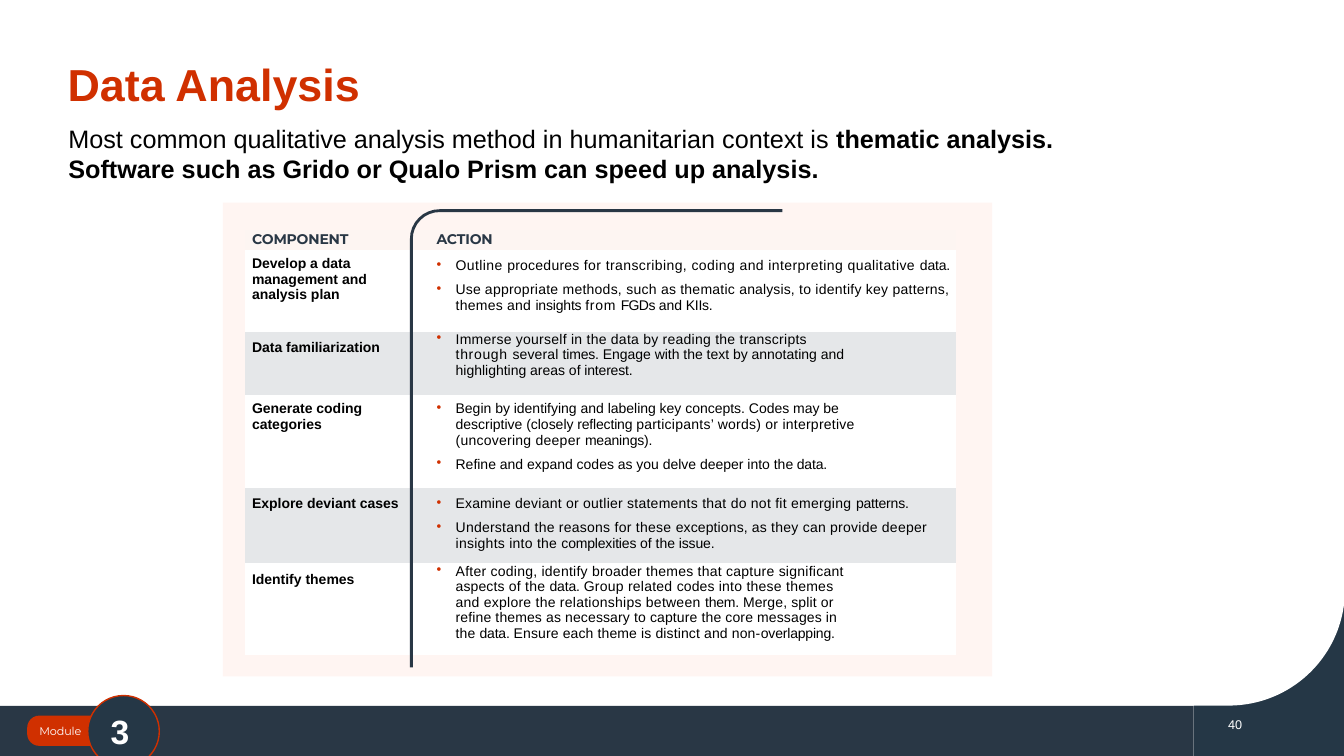
"""Builds the Data Analysis slide with its table of thematic analysis steps."""
import dataclasses
import math

import lxml.etree
import pptx
import pptx.dml.color
import pptx.enum.shapes
import pptx.enum.text
import pptx.oxml.ns
import pptx.util

Inches = pptx.util.Inches
Shape = pptx.enum.shapes.MSO_SHAPE
Align = pptx.enum.text.PP_ALIGN
qn = pptx.oxml.ns.qn
Box = tuple[float, float, float, float]
Spans = list[tuple[str, float]]


@dataclasses.dataclass(frozen=True)
class Theme:
    """Colours, fonts and type sizes."""
    navy: str = "253746"
    slate: str = "293745"
    red: str = "D03000"
    white: str = "FFFFFF"
    black: str = "000000"
    blush: str = "FFF5F2"
    header: str = "FDF5F2"
    grey: str = "E5E7E9"
    body: str = "Arial"
    label: str = "Montserrat"
    title_size: int = 32
    module_size: int = 24
    lead_size: int = 18
    table_size: int = 10
    number_size: int = 9
    tag_size: int = 8


THEME = Theme()


@dataclasses.dataclass(frozen=True)
class Block:
    """A filled preset shape."""
    kind: int
    box: Box
    fill: str
    outline: str | None = None
    corner: float | None = None


@dataclasses.dataclass(frozen=True)
class Label:
    """A text box with one style."""
    box: Box
    text: str
    size: int
    color: str
    font: str = THEME.body
    bold: bool = False
    align: int = Align.LEFT
    insets: Box = (0.1, 0.05, 0.1, 0.05)
    wrap: bool = True
    spacing: float = 0


@dataclasses.dataclass(frozen=True)
class Step:
    """A table row: component, bulleted actions as (text, letter spacing) spans."""
    component: str
    actions: list[Spans]
    height: float
    insets: tuple[float, float]
    right: float = 0


BACKDROP = [
    Block(Shape.RECTANGLE, (11.84, 5.7, 1.5, 1.8), THEME.navy),
    Block(Shape.RECTANGLE, (0, 7, 11.84, 0.5), THEME.slate),
    Block(Shape.ROUND_2_DIAG_RECTANGLE, (0, 0.09, 13.34, 6.91), THEME.white),
    Block(Shape.ROUNDED_RECTANGLE, (0.27, 7.1, 1.2, 0.3), THEME.red, corner=0.4),
    Block(Shape.OVAL, (0.87, 6.9, 0.71, 0.71), THEME.navy, THEME.red),
    Block(Shape.RECTANGLE, (2.21, 2.01, 7.63, 4.7), THEME.blush),
]
LABELS = [
    Label((12.06, 7.06, 0.36, 0.25), "40", THEME.number_size, THEME.white, align=Align.RIGHT, wrap=False),
    Label((0.39, 7.18, 1.02, 0.15), "Module", THEME.tag_size, THEME.white, THEME.label,
          insets=(0, 0.01, 0, 0), spacing=-0.1),
    Label((1, 7, 0.46, 0.5), "3", THEME.module_size, THEME.white, bold=True),
    Label((0.54, 0.43, 11.31, 0.77), "Data Analysis", THEME.title_size, THEME.red, bold=True,
          insets=(0.13, 0.13, 0.13, 0.13)),
]
LEAD = [
    [("Most common qualitative analysis method in humanitarian context is ", False), ("thematic analysis.", True)],
    [("Software such as Grido or Qualo Prism can speed up analysis.", True)],
]
HEADINGS = [("COMPONENT", 0.07), ("ACTION", 0.14)]
HEADER_HEIGHT = 0.2
COLUMNS = (1.76, 5.29)
STEPS = [
    Step("Develop a data management and analysis plan", [
        [("Outline ", 0.3), ("procedures ", 0.2),
         ("for transcribing, coding and interpreting qualitative ", 0.3), ("data.", -0.1)],
        [("Use ", 0.1), ("appropriate methods, such ", 0.2), ("as ", 0.1), ("thematic ", 0.2), ("analysis, ", 0.1),
         ("to identify key patterns, themes and ", 0.2), ("insights ", -0.1), ("from ", 0.5), ("FGDs ", -0.4),
         ("and ", 0), ("KIIs.", -0.2)]], 0.81, (0.06, 0.08)),
    Step("Data familiarization", [
        [("Immerse yourself in the data by reading the transcripts ", 0.2), ("through ", 0.5), ("several ", 0.1),
         ("times. ", -0.1), ("Engage with the text by annotating and highlighting areas of ", 0),
         ("interest.", -0.1)]], 0.63, (0.08, 0), 1.1),
    Step("Generate coding categories", [
        [("Begin by identifying and labeling key concepts. Codes may be descriptive (closely ", 0),
         ("reflecting ", -0.1), ("participants’ words) or interpretive (uncovering deeper ", 0.2),
         ("meanings).", -0.1)],
        [("Refine and expand codes as you delve deeper into the ", 0), ("data.", -0.1)]], 0.92, (0.06, 0.06), 0.85),
    Step("Explore deviant cases", [
        [("Examine ", 0.1), ("deviant or outlier statements that do not fit emerging ", 0.2), ("patterns.", -0.1)],
        [("Understand the reasons for these ", 0.2), ("exceptions, as ", 0.1),
         ("they can provide deeper insights into the ", 0.2), ("complexities ", -0.1), ("of the ", 0),
         ("issue.", -0.1)]], 0.75, (0.08, 0.08)),
    Step("Identify themes", [
        [("After coding, identify broader themes that capture significant ", 0.2), ("aspects ", 0.1),
         ("of the ", 0.2), ("data. ", -0.1), ("Group related ", 0.2), ("codes ", 0.1),
         ("into these themes and explore the relationships between ", 0.2), ("them. ", -0.1),
         ("Merge, split or refine themes as necessary to capture the core messages in the ", 0.1), ("data. ", -0.1),
         ("Ensure each theme is distinct and non-", 0.1), ("overlapping.", -0.1)]], 0.91, (0.08, 0), 0.98),
]


def rgb(color: str) -> pptx.dml.color.RGBColor:
    """Turn a hex string into a colour."""
    return pptx.dml.color.RGBColor.from_string(color)


def style(font, size: int, color: str, name: str = THEME.body, bold: bool | None = False) -> None:
    """Set a font's size, colour, name and weight."""
    font.size, font.name, font.bold = pptx.util.Pt(size), name, bold
    font.color.rgb = rgb(color)


def add_span(para, text: str, spacing: float = 0):
    """Add a run with letter spacing in points."""
    span = para.add_run()
    span.text = text
    if spacing:
        span._r.get_or_add_rPr().set("spc", str(round(spacing * 100)))
    return span


def set_margins(holder, insets: Box) -> None:
    """Set left, top, right and bottom insets."""
    (holder.margin_left, holder.margin_top,
     holder.margin_right, holder.margin_bottom) = map(Inches, insets)


def set_indent(para, left: float, hanging: float = 0, right: float = 0) -> None:
    """Set the paragraph's side margins and hanging indent."""
    props = para._p.get_or_add_pPr()
    for key, value in (("marL", left), ("indent", -hanging), ("marR", right)):
        props.set(key, str(Inches(value)))


def add_bullet(para) -> None:
    """Give the paragraph a red bullet."""
    props = para._p.get_or_add_pPr()
    color = lxml.etree.SubElement(props, qn("a:buClr"))
    lxml.etree.SubElement(color, qn("a:srgbClr")).set("val", THEME.red)
    lxml.etree.SubElement(props, qn("a:buChar")).set("char", "•")


def add_block(page, block: Block) -> None:
    """Draw a filled preset shape."""
    shape = page.shapes.add_shape(block.kind, *map(Inches, block.box))
    shape.shadow.inherit = False
    shape.fill.solid()
    shape.fill.fore_color.rgb = rgb(block.fill)
    if block.corner is not None:
        shape.adjustments[0] = block.corner
    if block.outline:
        shape.line.color.rgb, shape.line.width = rgb(block.outline), pptx.util.Pt(1)
    else:
        shape.line.fill.background()


def add_frame(page, box: Box, insets: Box, wrap: bool = True):
    """Add a text box and return its text frame."""
    frame = page.shapes.add_textbox(*map(Inches, box)).text_frame
    frame.word_wrap = wrap
    set_margins(frame, insets)
    return frame


def add_label(page, label: Label) -> None:
    """Draw a one-line label."""
    para = add_frame(page, label.box, label.insets, label.wrap).paragraphs[0]
    para.alignment = label.align
    add_span(para, label.text, label.spacing)
    style(para.font, label.size, label.color, label.font, label.bold)


def add_lead(page) -> None:
    """Draw the statement under the title."""
    frame = add_frame(page, (0.58, 1.12, 11.05, 0.76), (0.1,) * 4)
    for index, line in enumerate(LEAD):
        para = frame.add_paragraph() if index else frame.paragraphs[0]
        for text, bold in line:
            add_span(para, text).font.bold = bold
        style(para.font, THEME.lead_size, THEME.black, bold=None)


def prepare_cell(cell, fill: str, top: float):
    """Fill a cell, set its insets and return its first paragraph."""
    cell.fill.solid()
    cell.fill.fore_color.rgb = rgb(fill)
    set_margins(cell, (0, top, 0, 0))
    return cell.text_frame.paragraphs[0]


def add_steps(page) -> None:
    """Draw the table of components and actions."""
    heights = [HEADER_HEIGHT] + [step.height for step in STEPS]
    box = (2.43, 2.28, sum(COLUMNS), sum(heights))
    table = page.shapes.add_table(len(heights), len(COLUMNS), *map(Inches, box)).table
    table.first_row = table.horz_banding = False
    table._tbl.tblPr.find(qn("a:tableStyleId")).text = "{2D5ABB26-0587-4C30-8999-92F81FD0307C}"
    for column, width in zip(table.columns, COLUMNS):
        column.width = Inches(width)
    for row, height in zip(table.rows, heights):
        row.height = Inches(height)
    for index, (heading, left) in enumerate(HEADINGS):
        para = prepare_cell(table.cell(0, index), THEME.header, 0.01)
        set_indent(para, left)
        add_span(para, heading, -0.1)
        style(para.font, THEME.table_size, THEME.slate, THEME.label, True)
    for index, step in enumerate(STEPS, 1):
        fill = THEME.white if index % 2 else THEME.grey
        para = prepare_cell(table.cell(index, 0), fill, step.insets[0])
        set_indent(para, 0.07)
        add_span(para, step.component)
        style(para.font, THEME.table_size, THEME.black, bold=True)
        cell = table.cell(index, 1)
        para = prepare_cell(cell, fill, step.insets[1])
        for position, action in enumerate(step.actions):
            para = cell.text_frame.add_paragraph() if position else para
            set_indent(para, 0.33, 0.19, step.right)
            para.space_after = pptx.util.Pt(6)
            add_bullet(para)
            for text, spacing in action:
                add_span(para, text, spacing)
            style(para.font, THEME.table_size, THEME.black)


def add_divider(page) -> None:
    """Draw the line between the columns, which bends over the actions."""
    left, top, right, bottom, radius = 4.08, 2.09, 7.76, 6.62, 0.28
    turns = [math.pi / 2 * step / 8 for step in range(9)]
    bend = [(left + radius * (1 - math.cos(turn)), top + radius * (1 - math.sin(turn))) for turn in turns]
    points = [(Inches(x), Inches(y)) for x, y in [(left, bottom), *bend, (right, top)]]
    builder = page.shapes.build_freeform(*points[0])
    builder.add_line_segments(points[1:], close=False)
    divider = builder.convert_to_shape()
    divider.shadow.inherit = False
    divider.fill.background()
    divider.line.color.rgb, divider.line.width = rgb(THEME.slate), pptx.util.Pt(2)


def main() -> None:
    """Build and save the deck."""
    deck = pptx.Presentation()
    deck.slide_width, deck.slide_height = Inches(13.33), Inches(7.5)
    page = deck.slides.add_slide(deck.slide_layouts[6])
    for block in BACKDROP:
        add_block(page, block)
    for label in LABELS:
        add_label(page, label)
    add_lead(page)
    add_steps(page)
    add_divider(page)
    deck.save("out.pptx")


if __name__ == "__main__":
    main()
